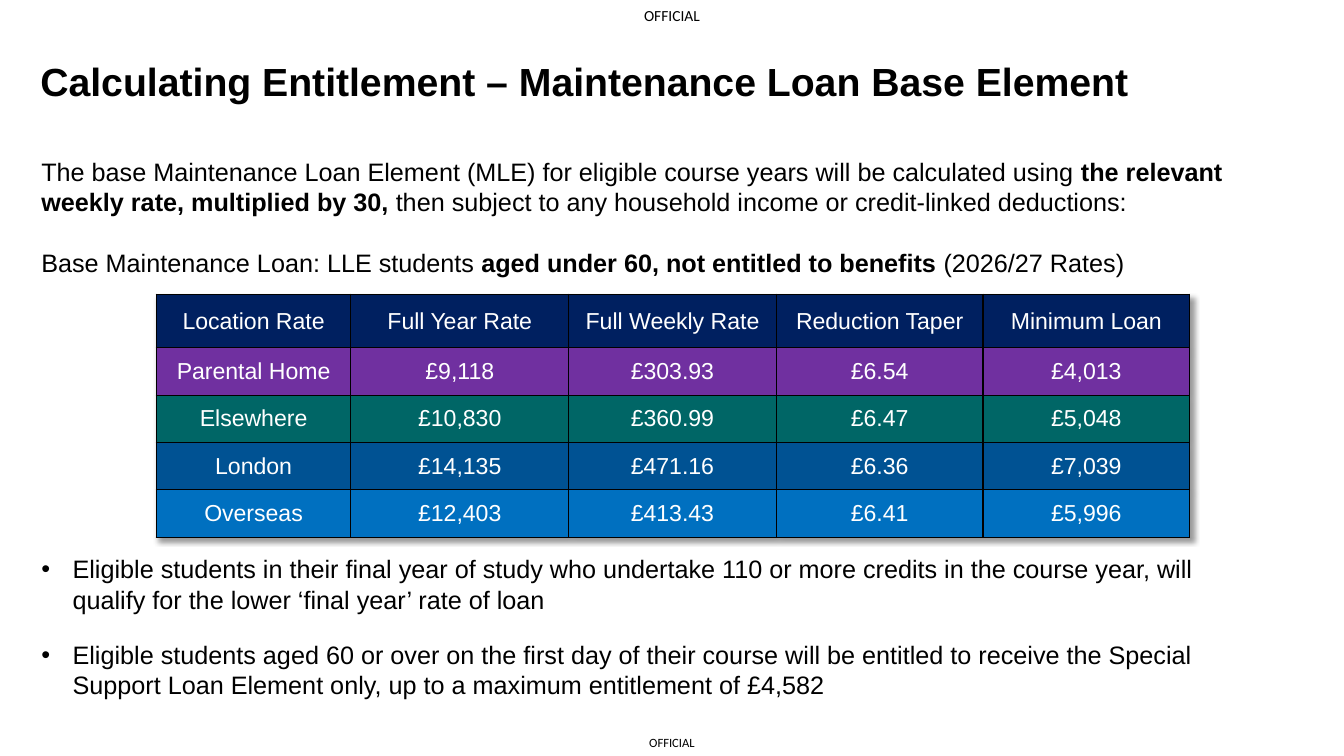
from lxml import etree
from pptx import Presentation
from pptx.dml.color import RGBColor
from pptx.enum.text import MSO_ANCHOR, MSO_AUTO_SIZE, PP_ALIGN
from pptx.oxml import parse_xml
from pptx.oxml.ns import nsdecls, qn
from pptx.util import Inches, Pt

LEFT, CENTER = PP_ALIGN.LEFT, PP_ALIGN.CENTER
TOP, MIDDLE = MSO_ANCHOR.TOP, MSO_ANCHOR.MIDDLE
NO_AUTOFIT = MSO_AUTO_SIZE.NONE
BLACK = RGBColor(0x00, 0x00, 0x00)
WHITE = RGBColor(0xFF, 0xFF, 0xFF)
NAVY = RGBColor(0x00, 0x20, 0x60)
PURPLE = RGBColor(0x70, 0x30, 0xA0)
TEAL = RGBColor(0x00, 0x66, 0x66)
DEEP_BLUE = RGBColor(0x00, 0x52, 0x93)
BLUE = RGBColor(0x00, 0x70, 0xC0)

TITLE = "Calculating Entitlement – Maintenance Loan Base Element"
INTRO = [
    ("The base Maintenance Loan Element (MLE) for eligible course years will be calculated using ", False),
    ("the relevant weekly rate, multiplied by 30, ", True),
    ("then subject to any household income or credit-linked deductions:", False),
]
RATES_CAPTION = [
    ("Base Maintenance Loan: LLE students ", False),
    ("aged under 60, not entitled to benefits ", True),
    ("(2026/27 Rates)", False),
]
FINAL_YEAR = [
    ("Eligible students in their final year of study who undertake 110 or more credits in the course year, "
     "will qualify for the lower ‘final year’ rate of loan", False),
]
OVER_60 = [
    ("Eligible students aged 60 or over on the first day of their course will be entitled to receive the "
     "Special Support Loan Element only, up to a maximum entitlement of £4,582", False),
]
BODY = [
    (INTRO, False, 0),
    (RATES_CAPTION, False, 22),
    (FINAL_YEAR, True, 197),
    (OVER_60, True, 18),
]
RATES = [
    (NAVY, ["Location Rate", "Full Year Rate", "Full Weekly Rate", "Reduction Taper", "Minimum Loan"]),
    (PURPLE, ["Parental Home", "£9,118", "£303.93", "£6.54", "£4,013"]),
    (TEAL, ["Elsewhere", "£10,830", "£360.99", "£6.47", "£5,048"]),
    (DEEP_BLUE, ["London", "£14,135", "£471.16", "£6.36", "£7,039"]),
    (BLUE, ["Overseas", "£12,403", "£413.43", "£6.41", "£5,996"]),
]
COL_WIDTHS = [1.93, 2.16, 2.06, 2.05, 2.05]
ROW_HEIGHTS = [0.53, 0.47, 0.47, 0.47, 0.47]
MARKINGS = [((6.23, 0, 0.87, 0.31), 11), ((6.3, 7.23, 0.73, 0.27), 9)]
TABLE_SHADOW = (
    f'<a:effectLst {nsdecls("a")}><a:outerShdw blurRad="50800" dist="38100" dir="2700000" '
    'algn="tl" rotWithShape="0"><a:srgbClr val="000000"><a:alpha val="40000"/></a:srgbClr>'
    "</a:outerShdw></a:effectLst>"
)


def set_attrs(obj, values):
    """Set each named attribute of an object."""
    for name, value in values.items():
        setattr(obj, name, value)


def place(sp, box):
    """Move and size a shape to a box in inches."""
    set_attrs(sp, dict(zip(("left", "top", "width", "height"), map(Inches, box))))


def add_run(p, text, size, color=BLACK, bold=False, name="Arial"):
    """Add one formatted run to a paragraph."""
    r = p.add_run()
    r.text = text
    set_attrs(r.font, {"size": Pt(size), "bold": bold, "name": name})
    r.font.color.rgb = color


def set_bullet(p, bulleted):
    """Give a paragraph a hanging bullet, or none."""
    pPr = p._p.get_or_add_pPr()
    indent = Inches(0.31) if bulleted else 0
    pPr.set("marL", str(indent))
    pPr.set("indent", str(-indent))
    if bulleted:
        etree.SubElement(pPr, qn("a:buFont")).set("typeface", "Arial")
        etree.SubElement(pPr, qn("a:buChar")).set("char", "•")
    else:
        etree.SubElement(pPr, qn("a:buNone"))


def fill_title(sp):
    """Place and fill the title placeholder."""
    place(sp, (0.3, 0.48, 12.55, 0.71))
    tf = sp.text_frame
    set_attrs(tf, {"vertical_anchor": MIDDLE, "word_wrap": True, "auto_size": NO_AUTOFIT})
    p = tf.paragraphs[0]
    set_attrs(p, {"alignment": LEFT, "line_spacing": 0.9})
    add_run(p, TITLE, 28, bold=True)


def fill_body(sp):
    """Place and fill the body placeholder."""
    place(sp, (0.31, 1.5, 12.32, 5.51))
    tf = sp.text_frame
    set_attrs(tf, {"vertical_anchor": TOP, "word_wrap": True, "auto_size": NO_AUTOFIT})
    for i, (runs, bulleted, before) in enumerate(BODY):
        p = tf.add_paragraph() if i else tf.paragraphs[0]
        set_bullet(p, bulleted)
        set_attrs(p, {"alignment": LEFT, "space_before": Pt(before), "space_after": Pt(0)})
        for text, bold in runs:
            add_run(p, text, 18, bold=bold)


def add_marking(s, box, size):
    """Add a centred protective marking."""
    sp = s.shapes.add_textbox(*map(Inches, box))
    tf = sp.text_frame
    set_attrs(tf, {"vertical_anchor": MIDDLE, "word_wrap": True})
    set_attrs(tf, dict.fromkeys(("margin_left", "margin_top", "margin_right", "margin_bottom"), 0))
    p = tf.paragraphs[0]
    p.alignment = CENTER
    add_run(p, "OFFICIAL", size, name="Calibri")


def set_borders(cell):
    """Draw a thin black line on each side of a cell."""
    tcPr = cell._tc.get_or_add_tcPr()
    for i, side in enumerate(("lnL", "lnR", "lnT", "lnB")):
        tcPr.insert(i, parse_xml(
            f'<a:{side} {nsdecls("a")} w="12700"><a:solidFill>'
            f'<a:srgbClr val="{BLACK}"/></a:solidFill></a:{side}>'))


def add_rates_table(s):
    """Add the table of loan rates by location."""
    box = (1.55, 2.92, sum(COL_WIDTHS), sum(ROW_HEIGHTS))
    table = s.shapes.add_table(len(RATES), len(COL_WIDTHS), *map(Inches, box)).table
    table._tbl.tblPr.insert(0, parse_xml(TABLE_SHADOW))
    for col, width in zip(table.columns, COL_WIDTHS):
        col.width = Inches(width)
    for row, height, (color, values) in zip(table.rows, ROW_HEIGHTS, RATES):
        row.height = Inches(height)
        for cell, value in zip(row.cells, values):
            cell.fill.solid()
            cell.fill.fore_color.rgb = color
            cell.vertical_anchor = MIDDLE
            set_borders(cell)
            p = cell.text_frame.paragraphs[0]
            p.alignment = CENTER
            add_run(p, value, 16.5, WHITE)


def main():
    """Build and save the slide."""
    prs = Presentation()
    set_attrs(prs, {"slide_width": Inches(13.33), "slide_height": Inches(7.5)})
    s = prs.slides.add_slide(prs.slide_layouts[1])
    fill_title(s.shapes.title)
    fill_body(s.placeholders[1])
    add_rates_table(s)
    for box, size in MARKINGS:
        add_marking(s, box, size)
    prs.save("out.pptx")


if __name__ == "__main__":
    main()
